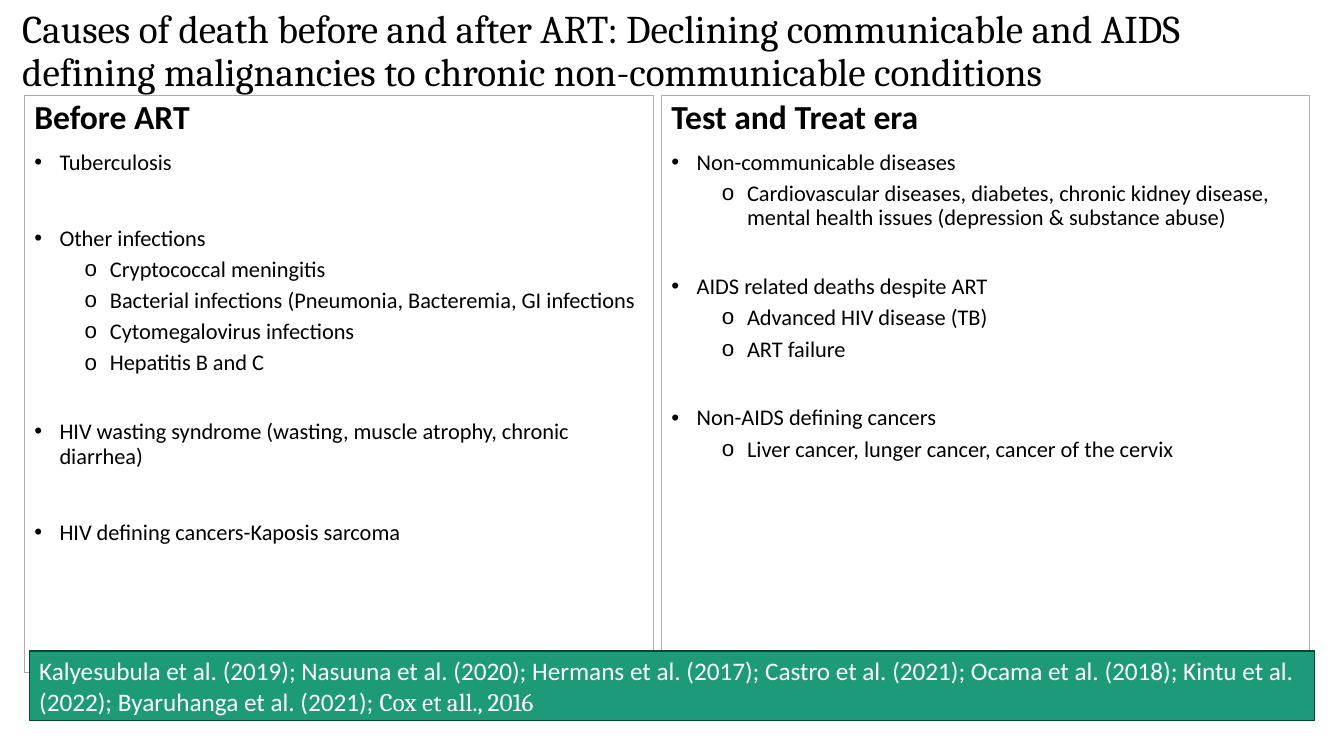
from dataclasses import dataclass

from lxml.etree import SubElement
from pptx import Presentation
from pptx.dml.color import RGBColor
from pptx.enum.shapes import MSO_SHAPE
from pptx.enum.text import MSO_ANCHOR, MSO_AUTO_SIZE, PP_ALIGN
from pptx.oxml.ns import qn
from pptx.util import Inches, Pt


@dataclass(frozen=True)
class Theme:
    ink: str = "000000"
    white: str = "FFFFFF"
    frame: str = "AFABAB"
    green: str = "1D9A78"
    edge: str = "0D4335"
    sans: str = "Calibri"
    serif: str = "Cambria"
    title: int = 28
    head: int = 24
    cite: int = 18
    body: int = 16


THEME = Theme()

TITLE = ("Causes of death before and after ART: Declining communicable and AIDS "
         "defining malignancies to chronic non-communicable conditions")

# Each topic holds its sub-points
BEFORE = [
    ("Tuberculosis", []),
    ("Other infections", [
        "Cryptococcal meningitis",
        "Bacterial infections (Pneumonia, Bacteremia, GI infections",
        "Cytomegalovirus infections",
        "Hepatitis B and C",
    ]),
    ("HIV wasting syndrome (wasting, muscle atrophy, chronic diarrhea)", []),
    ("HIV defining cancers-Kaposis sarcoma", []),
]
AFTER = [
    ("Non-communicable diseases", [
        "Cardiovascular diseases, diabetes, chronic kidney disease, "
        "mental health issues (depression & substance abuse)",
    ]),
    ("AIDS related deaths despite ART", ["Advanced HIV disease (TB)", "ART failure"]),
    ("Non-AIDS defining cancers", ["Liver cancer, lunger cancer, cancer of the cervix"]),
]
SOURCES = ("Kalyesubula et al. (2019); Nasuuna et al. (2020); Hermans et al. (2017); "
           "Castro et al. (2021); Ocama et al. (2018); Kintu et al. (2022); "
           "Byaruhanga et al. (2021); ")
LAST = "Cox et all., 2016"


def write(para, text, size=THEME.body, font=THEME.sans, color=THEME.ink,
          bold=False, space=0, lead=0.9):
    """Add a formatted run to a paragraph."""
    para.alignment = PP_ALIGN.LEFT
    para.line_spacing = lead
    para.space_before = Pt(space)
    run = para.add_run()
    run.text = text
    run.font.size = Pt(size)
    run.font.name = font
    run.font.bold = bold
    run.font.color.rgb = RGBColor.from_string(color)


def mark(para, sign=None, left=0.0):
    """Set the bullet and its hanging indent, or neither."""
    props = para._p.get_or_add_pPr()
    props.set("marL", str(Inches(left)))
    props.set("indent", str(Inches(-0.25 if sign else 0)))
    if sign:
        SubElement(props, qn("a:buChar"), char=sign)
    else:
        SubElement(props, qn("a:buNone"))


def place(shape, left, top, width, height, anchor):
    shape.left, shape.top = Inches(left), Inches(top)
    shape.width, shape.height = Inches(width), Inches(height)
    frame = shape.text_frame
    frame.word_wrap = True
    frame.auto_size = MSO_AUTO_SIZE.NONE
    frame.vertical_anchor = anchor
    return frame


def outline(shape, color, width):
    shape.line.color.rgb = RGBColor.from_string(color)
    shape.line.width = Pt(width)


def panel(holder, left, width, head, topics):
    """Fill a framed column with a heading and two-level list."""
    frame = place(holder, left, 0.95, width, 5.72, MSO_ANCHOR.TOP)
    outline(holder, THEME.frame, 0.75)
    para = frame.paragraphs[0]
    mark(para)
    write(para, head, size=THEME.head, bold=True)
    gap = 10
    for topic, points in topics:
        para = frame.add_paragraph()
        mark(para, "•", 0.25)
        write(para, topic, space=gap)
        for point in points:
            para = frame.add_paragraph()
            para.level = 1
            mark(para, "o", 0.75)
            write(para, point, space=5)
        gap = 32 if points else 37


def banner(slide):
    """Draw the bar of citations."""
    bar = slide.shapes.add_shape(MSO_SHAPE.RECTANGLE, 0, 0, 0, 0)
    bar.shadow.inherit = False
    bar.fill.solid()
    bar.fill.fore_color.rgb = RGBColor.from_string(THEME.green)
    outline(bar, THEME.edge, 1)
    frame = place(bar, 0.29, 6.46, 12.75, 0.69, MSO_ANCHOR.MIDDLE)
    for text, font in ((SOURCES, THEME.sans), (LAST, THEME.serif)):
        write(frame.paragraphs[0], text, size=THEME.cite, font=font,
              color=THEME.white, lead=1.0)


def main():
    deck = Presentation()
    deck.slide_width, deck.slide_height = Inches(13.33), Inches(7.5)
    slide = deck.slides.add_slide(deck.slide_layouts[3])

    # Title
    title, first, second = slide.placeholders
    frame = place(title, 0.12, 0.12, 12.87, 0.8, MSO_ANCHOR.MIDDLE)
    write(frame.paragraphs[0], TITLE, size=THEME.title, font=THEME.serif)

    # Columns and citations
    panel(first, 0.24, 6.24, "Before ART", BEFORE)
    panel(second, 6.56, 6.43, "Test and Treat era", AFTER)
    banner(slide)
    deck.save("out.pptx")


if __name__ == "__main__":
    main()
